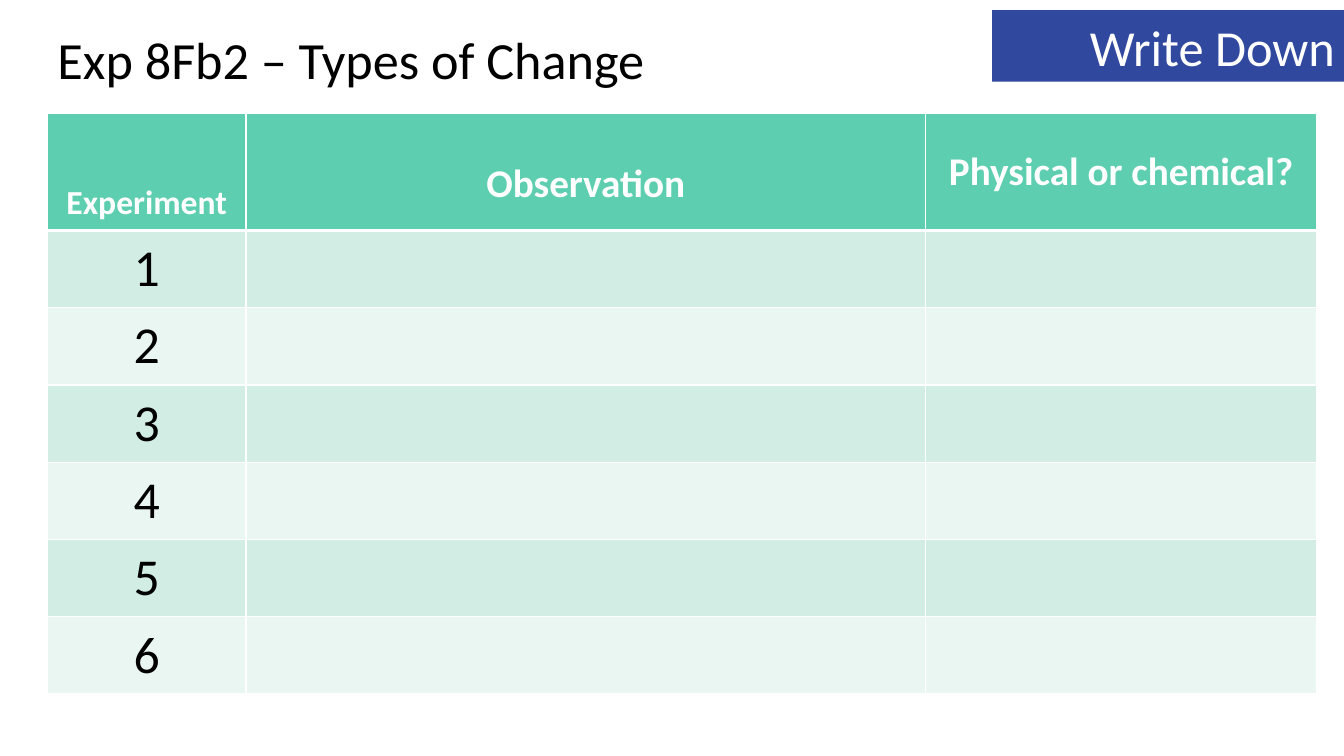
from pptx import Presentation
from pptx.dml.color import RGBColor
from pptx.enum.shapes import MSO_SHAPE as Shape
from pptx.enum.text import MSO_ANCHOR as Anchor, PP_ALIGN as Align
from pptx.oxml.ns import qn
from pptx.util import Inches, Pt
from lxml.etree import SubElement

WHITE, BLACK, BLUE, GREEN = "FFFFFF", "000000", "31489F", "5DCEAF"
BANDS = "D2EDE3", "EAF6F2"
COLS = 1.97, 6.74, 3.88
HEAD, ROW = 1.14, 0.76
# heading, size, line spacing
HEADS = (("Experiment", 24, 2.5), ("Observation", 28, 1.5),
         ("Physical or chemical?", 28, 1.0))


def color(text):
    return RGBColor.from_string(text)


def write(frame, text, size, ink, align=Align.LEFT, bold=False, space=1.0):
    frame.text = text
    para = frame.paragraphs[0]
    para.alignment, para.line_spacing = align, space
    font = para.runs[0].font
    look = {"name": "Calibri", "size": Pt(size), "bold": bold}
    for key, value in look.items():
        setattr(font, key, value)
    font.color.rgb = color(ink)


def place(item, box):
    for key, value in zip(("left", "top", "width", "height"), box):
        setattr(item, key, Inches(value))


def title(slide, box):
    item = slide.shapes.title
    place(item, box)
    item.text_frame.word_wrap = True
    item.text_frame.vertical_anchor = Anchor.MIDDLE
    write(item.text_frame, "Exp 8Fb2 – Types of Change", 37.3, BLACK)


def banner(slide, box):
    item = slide.shapes.add_shape(Shape.RECTANGLE, *map(Inches, box))
    item.shadow.inherit = False
    item.fill.solid()
    item.fill.fore_color.rgb = color(BLUE)
    item.line.fill.background()
    item.text_frame.vertical_anchor = Anchor.MIDDLE
    write(item.text_frame, "Write Down", 36, WHITE, Align.RIGHT)


def border(cell, sides):
    """Draw white cell edges; sides maps L, R, T, B to points."""
    props = cell._tc.get_or_add_tcPr()
    for side, width in sides.items():
        line = SubElement(props, qn(f"a:ln{side}"), w=str(Pt(width)))
        fill = SubElement(line, qn("a:solidFill"))
        SubElement(fill, qn("a:srgbClr"), val=WHITE)


def style(cell, fill, top, base):
    border(cell, {"L": 1, "R": 1, "T": top, "B": base})
    cell.fill.solid()
    cell.fill.fore_color.rgb = color(fill)
    cell.margin_left = cell.margin_right = Inches(0.13)
    cell.margin_top = cell.margin_bottom = Inches(0.07)


def table(slide, box, count):
    grid = slide.shapes.add_table(count + 1, len(COLS),
                                  *map(Inches, box)).table
    for col, width in zip(grid.columns, COLS):
        col.width = Inches(width)
    for i, row in enumerate(grid.rows):
        row.height = Inches(ROW if i else HEAD)
        for cell in row.cells:
            fill = BANDS[(i - 1) % 2] if i else GREEN
            style(cell, fill, 3 if i == 1 else 1, 1 if i else 3)
    for cell, (text, size, space) in zip(grid.rows[0].cells, HEADS):
        cell.vertical_anchor = Anchor.MIDDLE
        write(cell.text_frame, text, size, WHITE, Align.CENTER, True, space)
    for i in range(1, count + 1):
        write(grid.cell(i, 0).text_frame, str(i), 37, BLACK, Align.CENTER)


def main():
    deck = Presentation()
    deck.slide_width, deck.slide_height = Inches(13.33), Inches(7.5)
    slide = deck.slides.add_slide(deck.slide_layouts[5])
    title(slide, (0.47, 0.22, 12.91, 0.73))
    table(slide, (0.47, 1.13, sum(COLS), HEAD + 6 * ROW), 6)
    banner(slide, (9.84, 0.1, 3.5, 0.71))
    deck.save("out.pptx")


if __name__ == "__main__":
    main()
